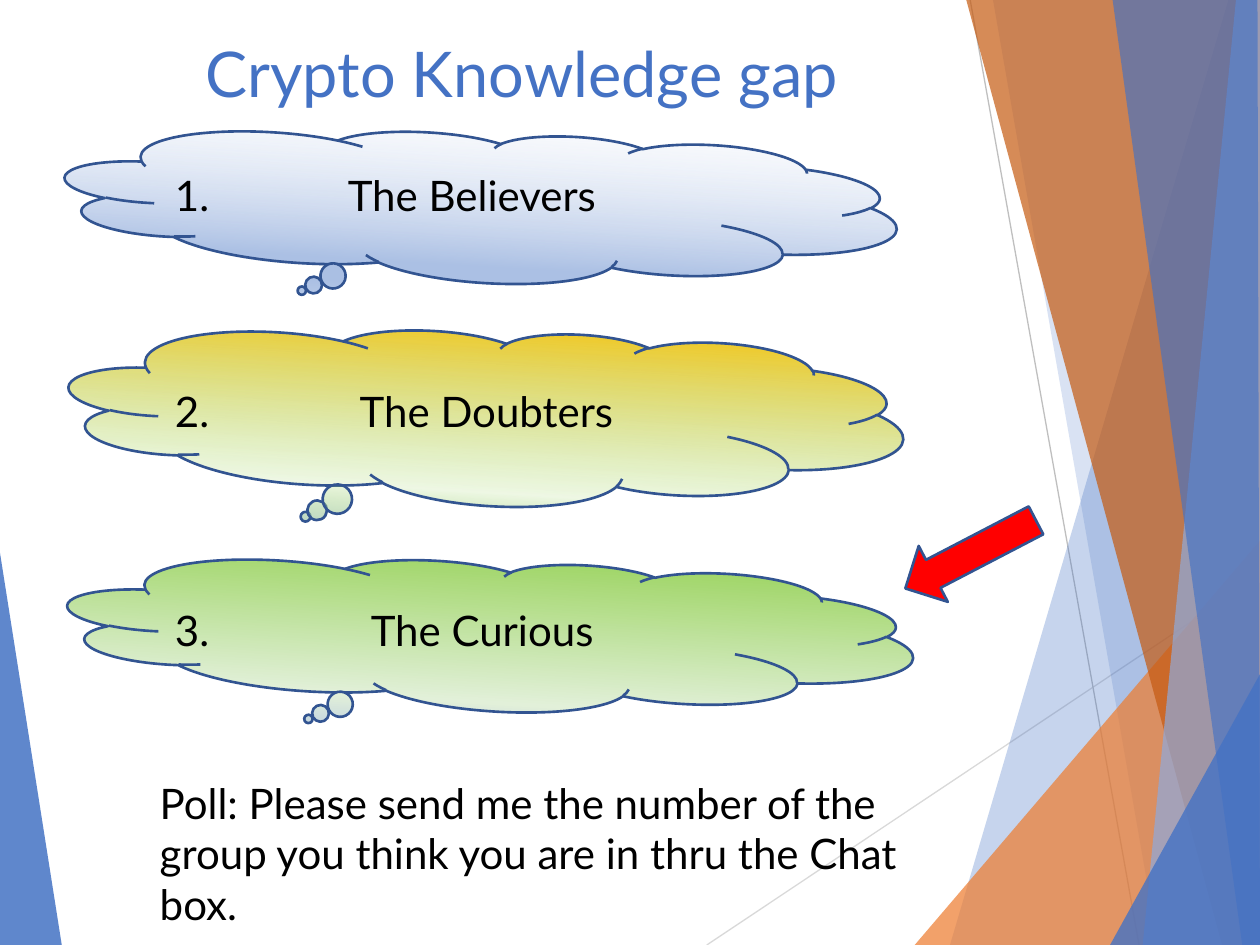
from lxml.etree import SubElement
from pptx import Presentation
from pptx.dml.color import RGBColor
from pptx.enum.shapes import MSO_CONNECTOR, MSO_SHAPE
from pptx.enum.text import MSO_ANCHOR, PP_ALIGN
from pptx.oxml import parse_xml
from pptx.oxml.ns import nsdecls, qn
from pptx.util import Pt

FONT = "Lato"
WIDTH, HEIGHT = 720, 540
BLUE = RGBColor(0x44, 0x72, 0xC4)
PALE_BLUE = RGBColor(0x8F, 0xAA, 0xDC)
ORANGE = RGBColor(0xED, 0x7D, 0x31)
DARK_ORANGE = RGBColor(0xC5, 0x5A, 0x11)
OUTLINE = RGBColor(0x32, 0x54, 0x91)
BLACK = RGBColor(0, 0, 0)
RED = RGBColor(0xFF, 0, 0)
GRAY = RGBColor(0xBF, 0xBF, 0xBF)
LIGHT_GRAY = RGBColor(0xD9, 0xD9, 0xD9)

TITLE = "Crypto Knowledge gap"
POLL = ("Poll: Please send me the number of the group you think "
        "you are in thru the Chat box.")

# Background facets: corner points, colour, opacity in percent
LEFT_FACET = ([(0, 316), (35.3, 540), (0, 540)], BLUE, 85)
RIGHT_FACETS = [
    ([(702, 0), (542.9, 540), (720, 540), (720, 0)], BLUE, 30),
    ([(567.4, 0), (661.7, 540), (720, 540), (720, 0)], BLUE, 20),
    ([(522.7, 540), (720, 309), (720, 540)], ORANGE, 72),
    ([(552.2, 0), (698.4, 540), (720, 540), (720, 0)], DARK_ORANGE, 70),
    ([(706.3, 0), (653, 540), (720, 540), (720, 0)], PALE_BLUE, 70),
    ([(635.8, 0), (709.9, 540), (720, 540), (718.6, 0)], BLUE, 65),
    ([(634.3, 540), (720, 385.2), (720, 540)], BLUE, 80),
]
# Hairlines: start, end, colour
HAIRLINES = [((403.9, 540), (720, 329), LIGHT_GRAY),
             ((554.4, 0), (650.9, 540), GRAY)]

# Gradient tails: position, colour, opacity in percent
GREEN_TAIL = [(100, "ABC0E4", 100), (100, "00B050", 100), (100, "C7D5ED", 100)]
# Groups: name, cloud box, label top, tab stop, gradient
GROUPS = [
    ("The Believers", (36.7, 74.9, 475.9, 86.4), 93.6, 98.8,
     [(0, "F6F8FC", 0), (74, "ABC0E4", 100), (83, "ABC0E4", 100),
      (100, "C7D5ED", 100)]),
    ("The Doubters", (38.9, 187.9, 477.4, 100.8), 216.7, 105.6,
     [(7, "FFC000", 100), (77, "92D050", 15)] + GREEN_TAIL),
    ("The Curious", (38.2, 319.7, 483.8, 86.4), 342, 111.9,
     [(7, "92D050", 100), (77, "E2F0D9", 100)] + GREEN_TAIL),
]
LABEL_LEFT, LABEL_WIDTH, LABEL_HEIGHT = 92.9, 400, 36
CLOUD_ANGLE = 3.4


def add_facet(s, points, color, opacity):
    builder = s.shapes.build_freeform(Pt(points[0][0]), Pt(points[0][1]))
    builder.add_line_segments([(Pt(x), Pt(y)) for x, y in points[1:]])
    sp = builder.convert_to_shape()
    sp.shadow.inherit = False
    sp.fill.solid()
    sp.fill.fore_color.rgb = color
    clr = sp._element.spPr.find(".//" + qn("a:srgbClr"))
    SubElement(clr, qn("a:alpha"), val=str(opacity * 1000))
    sp.line.fill.background()


def add_hairline(s, start, end, color):
    line = s.shapes.add_connector(
        MSO_CONNECTOR.STRAIGHT, *(Pt(v) for v in start + end))
    line.line.color.rgb = color
    line.line.width = Pt(0.75)
    SubElement(line._element.spPr, qn("a:effectLst"))


def add_outlined(s, kind, box, angle):
    sp = s.shapes.add_shape(kind, *(Pt(v) for v in box))
    sp.rotation = angle
    sp.shadow.inherit = False
    sp.line.color.rgb = OUTLINE
    sp.line.width = Pt(1.5)
    return sp


def set_gradient(sp, stops):
    """Fill from top to bottom; stops may carry their own opacity."""
    gs = "".join(
        f'<a:gs pos="{pos * 1000}"><a:srgbClr val="{color}">'
        f'<a:alpha val="{opacity * 1000}"/></a:srgbClr></a:gs>'
        for pos, color, opacity in stops)
    fill = parse_xml(
        f'<a:gradFill rotWithShape="1" {nsdecls("a")}><a:gsLst>{gs}</a:gsLst>'
        '<a:lin ang="5400000" scaled="1"/></a:gradFill>')
    sp._element.spPr.find(qn("a:prstGeom")).addnext(fill)


def write(tf, text, size, color):
    tf.word_wrap = True
    p = tf.paragraphs[0]
    p.text = text
    p.font.name = FONT
    p.font.size = Pt(size)
    p.font.color.rgb = color
    return p


def add_text(s, text, box):
    tb = s.shapes.add_textbox(*(Pt(v) for v in box))
    return write(tb.text_frame, text, 24, BLACK)


def set_tab(p, position):
    tabs = parse_xml(f'<a:tabLst {nsdecls("a")}>'
                     f'<a:tab pos="{Pt(position)}" algn="l"/></a:tabLst>')
    p._p.get_or_add_pPr().insert(0, tabs)


def main():
    prs = Presentation()
    prs.slide_width, prs.slide_height = Pt(WIDTH), Pt(HEIGHT)
    s = prs.slides.add_slide(prs.slide_layouts[5])

    add_facet(s, *LEFT_FACET)
    for hairline in HAIRLINES:
        add_hairline(s, *hairline)
    for facet in RIGHT_FACETS:
        add_facet(s, *facet)

    title = s.shapes.title
    title.left, title.top = Pt(110.2), Pt(14.4)
    title.width, title.height = Pt(499.7), Pt(54)
    title.text_frame.vertical_anchor = MSO_ANCHOR.MIDDLE
    write(title.text_frame, TITLE, 36, BLUE).alignment = PP_ALIGN.LEFT

    for number, (name, box, top, tab, stops) in enumerate(GROUPS, 1):
        cloud = add_outlined(s, MSO_SHAPE.CLOUD_CALLOUT, box, CLOUD_ANGLE)
        set_gradient(cloud, stops)
        p = add_text(s, f"{number}.\t{name}",
                     (LABEL_LEFT, top, LABEL_WIDTH, LABEL_HEIGHT))
        set_tab(p, tab)

    arrow = add_outlined(s, MSO_SHAPE.LEFT_ARROW, (512.6, 298.8, 84.2, 36), 332.5)
    arrow.fill.solid()
    arrow.fill.fore_color.rgb = RED
    add_text(s, POLL, (84.2, 440.6, 454.3, 94.3))

    prs.save("out.pptx")


if __name__ == "__main__":
    main()
